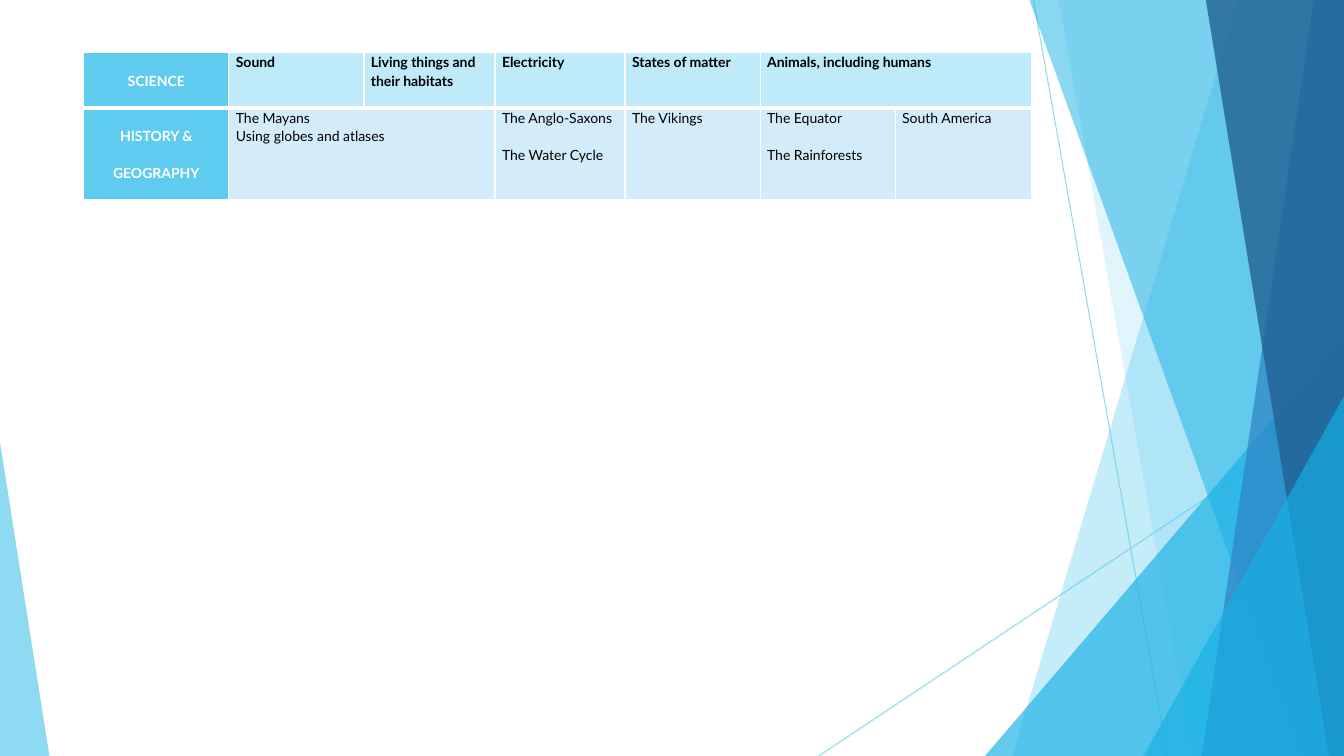
from dataclasses import dataclass

from lxml import etree
from pptx import Presentation
from pptx.dml.color import RGBColor
from pptx.enum import shapes, text
from pptx.oxml import ns
from pptx.util import Inches, Pt

WIDTH, HEIGHT = 13.33, 7.5
COLORS = {
    "sky": "5FCBEF", "azure": "17B0E4", "blue": "2E83C3", "navy": "226292",
    "science": "BFEAF9", "humanities": "D2ECF9", "white": "FFFFFF", "black": "000000",
}
FONT = "Lato"
LINE_GAP = 13.2
COLUMN_WIDTHS = [1.44, 1.34, 1.3, 1.29, 1.34, 1.34, 1.35]
ROW_HEIGHTS = [0.55, 0.91]


@dataclass(frozen=True)
class Ray:
    start: tuple[float, float]
    end: tuple[float, float]


@dataclass(frozen=True)
class Band:
    """A full-height panel from a slanted left edge to the right of the slide."""
    top_x: float
    bottom_x: float
    color: str
    opacity: int


@dataclass(frozen=True)
class Wedge:
    """A triangle standing on the bottom of the slide; apex runs from 0 (left) to 1 (right)."""
    left: float
    top: float
    width: float
    apex: float
    color: str
    opacity: int


@dataclass(frozen=True)
class Entry:
    row: int
    column: int
    lines: tuple[str, ...]
    span: int = 1
    gap: float = 0


RAYS = [Ray((10.25, 0), (11.58, HEIGHT)), Ray((WIDTH, 4.03), (8.12, HEIGHT))]
FACETS = [
    Band(12.28, 10.04, "sky", 36),
    Band(10.5, 11.83, "sky", 20),
    Wedge(9.77, 3.33, 3.56, 1, "azure", 66),
    Band(10.21, 12.91, "azure", 50),
    Band(13.03, 11.92, "blue", 70),
    Band(11.96, 13.18, "navy", 80),
    Wedge(11.34, 3.93, 1.99, 1, "azure", 66),
    Wedge(0, 4.39, 0.49, 0, "sky", 70),
]
ENTRIES = [
    Entry(0, 0, ("SCIENCE",)),
    Entry(0, 1, ("Sound",)),
    Entry(0, 2, ("Living things and their habitats",)),
    Entry(0, 3, ("Electricity",)),
    Entry(0, 4, ("States of matter",)),
    Entry(0, 5, ("Animals, including humans",), span=2),
    Entry(1, 0, ("HISTORY &", "GEOGRAPHY"), gap=LINE_GAP),
    Entry(1, 1, ("The Mayans", "Using globes and atlases"), span=2),
    Entry(1, 3, ("The Anglo-Saxons", "The Water Cycle"), gap=LINE_GAP),
    Entry(1, 4, ("The Vikings",)),
    Entry(1, 5, ("The Equator", "The Rainforests"), gap=LINE_GAP),
    Entry(1, 6, ("South America",)),
]


def rgb(name: str) -> RGBColor:
    return RGBColor.from_string(COLORS[name])


def set_opacity(shape, percent: int) -> None:
    for color in shape.element.spPr.iter(ns.qn("a:srgbClr")):
        etree.SubElement(color, ns.qn("a:alpha"), val=str(percent * 1000))


def draw_ray(slide, ray: Ray) -> None:
    points = [Inches(value) for value in (*ray.start, *ray.end)]
    connector = slide.shapes.add_connector(shapes.MSO_CONNECTOR.STRAIGHT, *points)
    connector.line.color.rgb = rgb("sky")
    connector.line.width = Pt(0.75)
    set_opacity(connector, 70)
    etree.SubElement(connector.element.spPr, ns.qn("a:effectLst"))


def draw_facet(slide, facet: Band | Wedge) -> None:
    if isinstance(facet, Band):
        builder = slide.shapes.build_freeform(Inches(facet.top_x), 0)
        corners = [(WIDTH, 0), (WIDTH, HEIGHT), (facet.bottom_x, HEIGHT)]
        builder.add_line_segments([(Inches(x), Inches(y)) for x, y in corners])
        shape = builder.convert_to_shape()
    else:
        shape = slide.shapes.add_shape(
            shapes.MSO_SHAPE.ISOSCELES_TRIANGLE, Inches(facet.left), Inches(facet.top),
            Inches(facet.width), Inches(HEIGHT - facet.top))
        shape.adjustments[0] = facet.apex
    shape.shadow.inherit = False
    shape.fill.solid()
    shape.fill.fore_color.rgb = rgb(facet.color)
    shape.line.fill.background()
    set_opacity(shape, facet.opacity)


def set_borders(cell, row: int) -> None:
    """White rules, thicker between the two rows."""
    widths = {"lnL": 1, "lnR": 1, "lnT": 3 if row == 1 else 1, "lnB": 3 if row == 0 else 1}
    properties = cell._tc.get_or_add_tcPr()
    for side, width in widths.items():
        line = etree.SubElement(properties, ns.qn(f"a:{side}"), w=str(Pt(width)))
        fill = etree.SubElement(line, ns.qn("a:solidFill"))
        etree.SubElement(fill, ns.qn("a:srgbClr"), val=COLORS["white"])


def fill_cell(cell, entry: Entry) -> None:
    is_label = entry.column == 0
    cell.margin_left = cell.margin_right = Inches(0.07)
    cell.margin_top = cell.margin_bottom = 0
    cell.vertical_anchor = text.MSO_ANCHOR.MIDDLE if is_label else text.MSO_ANCHOR.TOP
    cell.text_frame.text = "\n".join(entry.lines)
    for index, paragraph in enumerate(cell.text_frame.paragraphs):
        paragraph.alignment = text.PP_ALIGN.CENTER if is_label else text.PP_ALIGN.LEFT
        paragraph.line_spacing = 1.1
        paragraph.space_before = Pt(entry.gap if index else 0)
        paragraph.font.name = FONT
        paragraph.font.size = Pt(10)
        paragraph.font.bold = is_label or entry.row == 0
        paragraph.font.color.rgb = rgb("white" if is_label else "black")


def draw_curriculum(slide) -> None:
    table = slide.shapes.add_table(
        len(ROW_HEIGHTS), len(COLUMN_WIDTHS), Inches(0.83), Inches(0.52),
        Inches(sum(COLUMN_WIDTHS)), Inches(sum(ROW_HEIGHTS))).table
    table.first_row = table.horz_banding = False
    for column, width in zip(table.columns, COLUMN_WIDTHS):
        column.width = Inches(width)
    for row_index, (row, height) in enumerate(zip(table.rows, ROW_HEIGHTS)):
        row.height = Inches(height)
        for column_index, cell in enumerate(row.cells):
            set_borders(cell, row_index)
            cell.fill.solid()
            row_color = ("science", "humanities")[row_index]
            cell.fill.fore_color.rgb = rgb(row_color if column_index else "sky")
    for entry in ENTRIES:
        cell = table.cell(entry.row, entry.column)
        if entry.span > 1:
            cell.merge(table.cell(entry.row, entry.column + entry.span - 1))
        fill_cell(cell, entry)


def main() -> None:
    presentation = Presentation()
    presentation.slide_width = Inches(WIDTH)
    presentation.slide_height = Inches(HEIGHT)
    slide = presentation.slides.add_slide(presentation.slide_layouts[6])
    for ray in RAYS:
        draw_ray(slide, ray)
    for facet in FACETS:
        draw_facet(slide, facet)
    draw_curriculum(slide)
    presentation.save("out.pptx")


if __name__ == "__main__":
    main()
